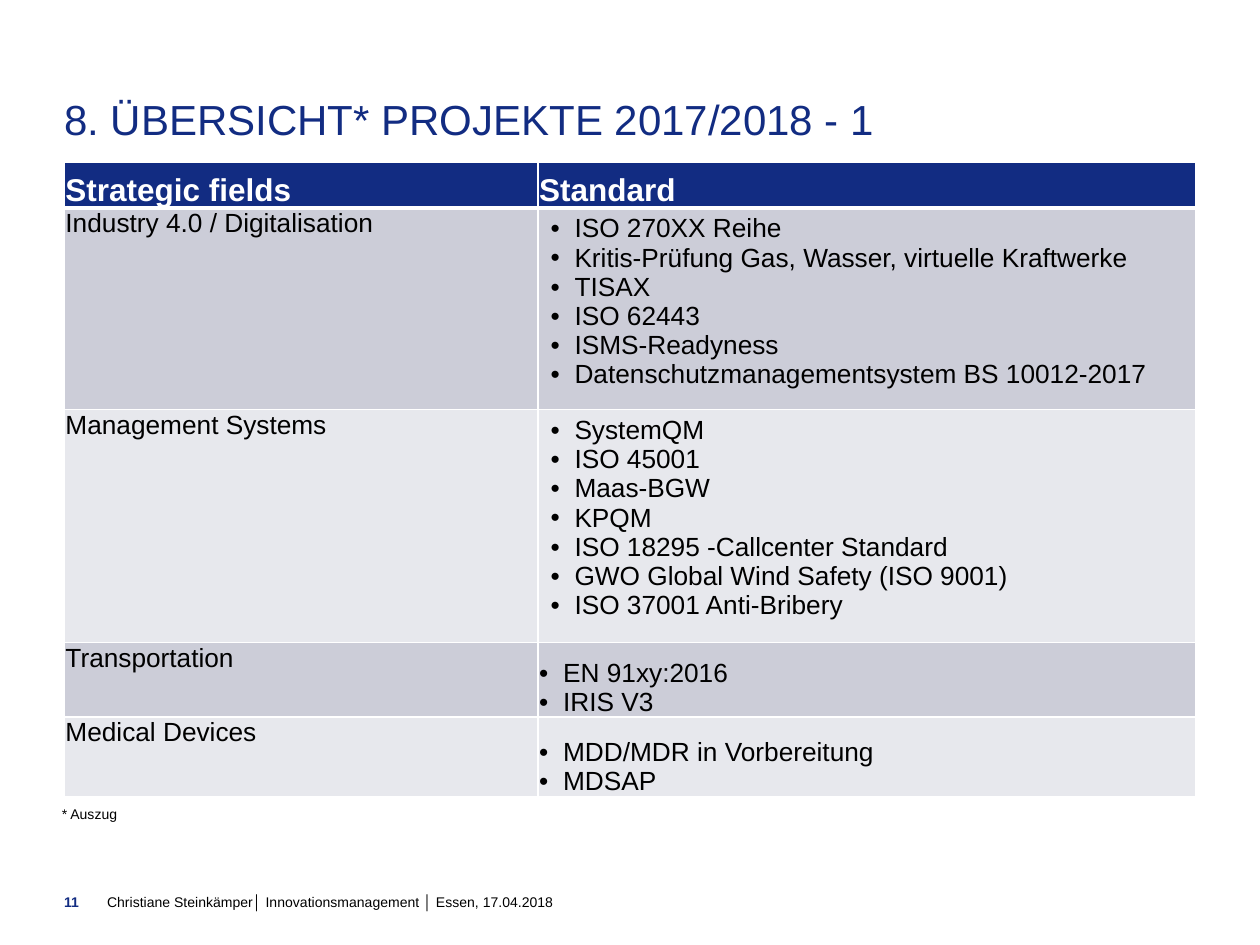
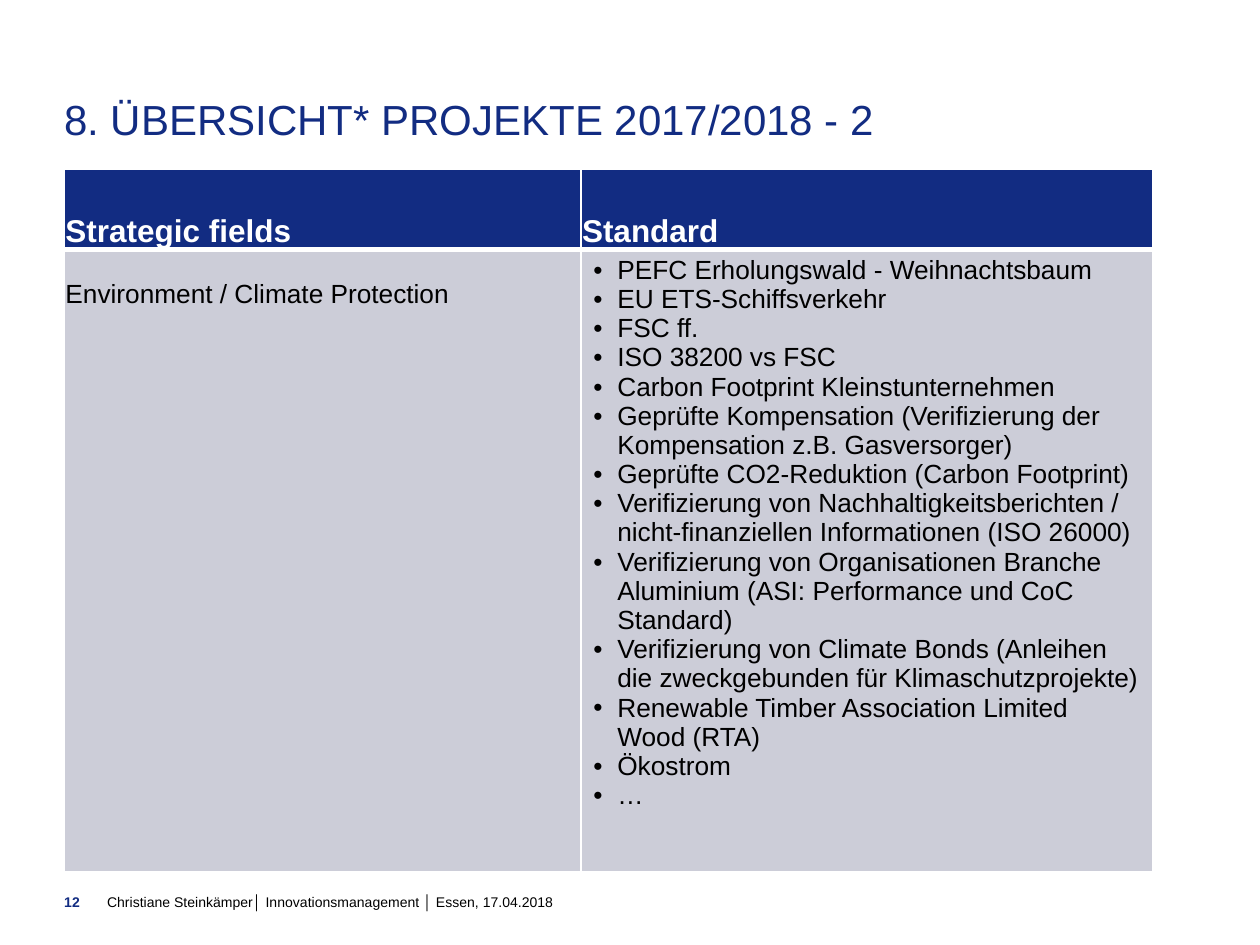
from lxml import etree
from pptx import Presentation
from pptx.dml.color import RGBColor
from pptx.enum import text
from pptx.oxml import ns
from pptx.util import Inches, Pt

FOOTER = "Christiane Steinkämper│ Innovationsmanagement │ Essen, 17.04.2018"
HEADINGS = ("Strategic fields", "Standard")

OVERVIEWS = [
    {
        "title": "8. ÜBERSICHT* PROJEKTE 2017/2018 - 1",
        "number": "11",
        "top": 1.29,
        "columns": (3.76, 5.22),
        "heading_height": 0.36,
        "field_inset": 0.01,
        "footnote": "* Auszug",
        "fields": [
            ("Industry 4.0 / Digitalisation", 1.48, "top", [
                "ISO 270XX Reihe",
                "Kritis-Prüfung Gas, Wasser, virtuelle Kraftwerke",
                "TISAX",
                "ISO 62443",
                "ISMS-Readyness",
                "Datenschutzmanagementsystem BS 10012-2017",
            ]),
            ("Management Systems", 1.72, "top", [
                "SystemQM",
                "ISO 45001",
                "Maas-BGW",
                "KPQM",
                "ISO 18295 -Callcenter Standard",
                "GWO Global Wind Safety (ISO 9001)",
                "ISO 37001 Anti-Bribery",
            ]),
            ("Transportation", 0.59, "bottom", ["EN 91xy:2016", "IRIS V3"]),
            ("Medical Devices", 0.63, "bottom", ["MDD/MDR in Vorbereitung", "MDSAP"]),
        ],
    },
    {
        "title": "8. ÜBERSICHT* PROJEKTE 2017/2018 - 2",
        "number": "12",
        "top": 1.34,
        "columns": (4.1, 4.54),
        "heading_height": 0.64,
        "field_inset": 0.24,
        "footnote": None,
        "fields": [
            ("Environment / Climate Protection", 4.94, "top", [
                "PEFC Erholungswald - Weihnachtsbaum",
                "EU ETS-Schiffsverkehr",
                "FSC ff.",
                "ISO 38200 vs FSC",
                "Carbon Footprint Kleinstunternehmen",
                "Geprüfte Kompensation (Verifizierung der Kompensation z.B. Gasversorger)",
                "Geprüfte CO2-Reduktion (Carbon Footprint)",
                "Verifizierung von Nachhaltigkeitsberichten / nicht-finanziellen Informationen (ISO 26000)",
                "Verifizierung von Organisationen Branche Aluminium (ASI: Performance und CoC Standard)",
                "Verifizierung von Climate Bonds (Anleihen die zweckgebunden für Klimaschutzprojekte)",
                "Renewable Timber Association Limited Wood (RTA)",
                "Ökostrom",
                "…",
            ]),
        ],
    },
]

NAVY = RGBColor(0x12, 0x2C, 0x82)
WHITE = RGBColor(0xFF, 0xFF, 0xFF)
BLACK = RGBColor(0, 0, 0)
BANDS = (RGBColor(0xCC, 0xCD, 0xD8), RGBColor(0xE7, 0xE8, 0xED))
FONT = "Arial"
LEFT = 0.51
BULLET_INDENT = Inches(0.19)
TIGHT = (0.01, 0.01, 0.01, 0)
ROOMY = (0.1, 0.05, 0.1, 0.05)
ANCHORS = {"top": text.MSO_ANCHOR.TOP, "bottom": text.MSO_ANCHOR.BOTTOM}


def style(paragraph, size, color, bold=False):
    font = paragraph.font
    font.name, font.size, font.bold = FONT, Pt(size), bold
    font.color.rgb = color


def set_insets(target, insets):
    sides = ("left", "top", "right", "bottom")
    for side, inset in zip(sides, insets):
        setattr(target, f"margin_{side}", Inches(inset))


def add_label(slide, words, left, top, width, color=BLACK, bold=False):
    label = slide.shapes.add_textbox(
        Inches(left), Inches(top), Inches(width), Inches(0.13))
    frame = label.text_frame
    frame.word_wrap = True
    set_insets(frame, (0, 0, 0, 0))
    frame.text = words
    style(frame.paragraphs[0], 8, color, bold)


def add_bullet(paragraph):
    properties = paragraph._p.get_or_add_pPr()
    properties.set("marL", str(BULLET_INDENT))
    properties.set("indent", str(-BULLET_INDENT))
    etree.SubElement(properties, ns.qn("a:buFont"), typeface=FONT)
    etree.SubElement(properties, ns.qn("a:buChar"), char="•")


def add_borders(cell, top, bottom):
    properties = cell._tc.get_or_add_tcPr()
    for side, points in (("L", 1), ("R", 1), ("T", top), ("B", bottom)):
        line = etree.SubElement(
            properties, ns.qn(f"a:ln{side}"), w=str(Pt(points)))
        fill = etree.SubElement(line, ns.qn("a:solidFill"))
        etree.SubElement(fill, ns.qn("a:srgbClr"), val=str(WHITE))


def fill_cell(cell, lines, size, color, band, insets, anchor="top",
              bold=False, bullets=False, rules=(1, 1)):
    add_borders(cell, *rules)
    cell.fill.solid()
    cell.fill.fore_color.rgb = band
    set_insets(cell, insets)
    cell.vertical_anchor = ANCHORS[anchor]
    cell.text = "\n".join(lines)
    for paragraph in cell.text_frame.paragraphs:
        if bullets:
            add_bullet(paragraph)
        style(paragraph, size, color, bold)


def add_overview_table(slide, overview):
    fields, columns = overview["fields"], overview["columns"]
    heights = [overview["heading_height"]] + [field[1] for field in fields]
    table = slide.shapes.add_table(
        len(heights), len(columns), Inches(LEFT), Inches(overview["top"]),
        Inches(sum(columns)), Inches(sum(heights))).table
    table.first_row = table.horz_banding = False
    for column, width in zip(table.columns, columns):
        column.width = Inches(width)
    for row, height in zip(table.rows, heights):
        row.height = Inches(height)

    for column, heading in enumerate(HEADINGS):
        fill_cell(table.cell(0, column), [heading], 18, WHITE, NAVY, TIGHT,
                  "bottom", bold=True, rules=(1, 3))
    field_insets = (0.01, overview["field_inset"], 0.01, 0)
    for row, (field, _, anchor, standards) in enumerate(fields, 1):
        band = BANDS[(row - 1) % len(BANDS)]
        rules = (3 if row == 1 else 1, 1)
        fill_cell(table.cell(row, 0), [field], 15, BLACK, band, field_insets,
                  rules=rules)
        fill_cell(table.cell(row, 1), standards, 15, BLACK, band,
                  TIGHT if anchor == "bottom" else ROOMY, anchor,
                  bullets=True, rules=rules)


def add_title(slide, words):
    title = slide.shapes.title
    title.left, title.top = Inches(LEFT), Inches(0.39)
    title.width, title.height = Inches(8.98), Inches(0.75)
    frame = title.text_frame
    frame.text = words
    frame.auto_size = text.MSO_AUTO_SIZE.NONE
    frame.vertical_anchor = text.MSO_ANCHOR.BOTTOM
    set_insets(frame, (0, 0, 0, 0))
    frame.paragraphs[0].alignment = text.PP_ALIGN.LEFT
    style(frame.paragraphs[0], 24, NAVY)


def main():
    deck = Presentation()
    deck.slide_width, deck.slide_height = Inches(10), Inches(7.5)
    for overview in OVERVIEWS:
        slide = deck.slides.add_slide(deck.slide_layouts[5])
        add_title(slide, overview["title"])
        add_label(slide, FOOTER, 0.85, 7.09, 5.66)
        add_label(slide, overview["number"], LEFT, 7.09, 0.29, NAVY, True)
        add_overview_table(slide, overview)
        if overview["footnote"]:
            add_label(slide, overview["footnote"], 0.49, 6.39, 0.92)
    deck.save("out.pptx")


if __name__ == "__main__":
    main()
